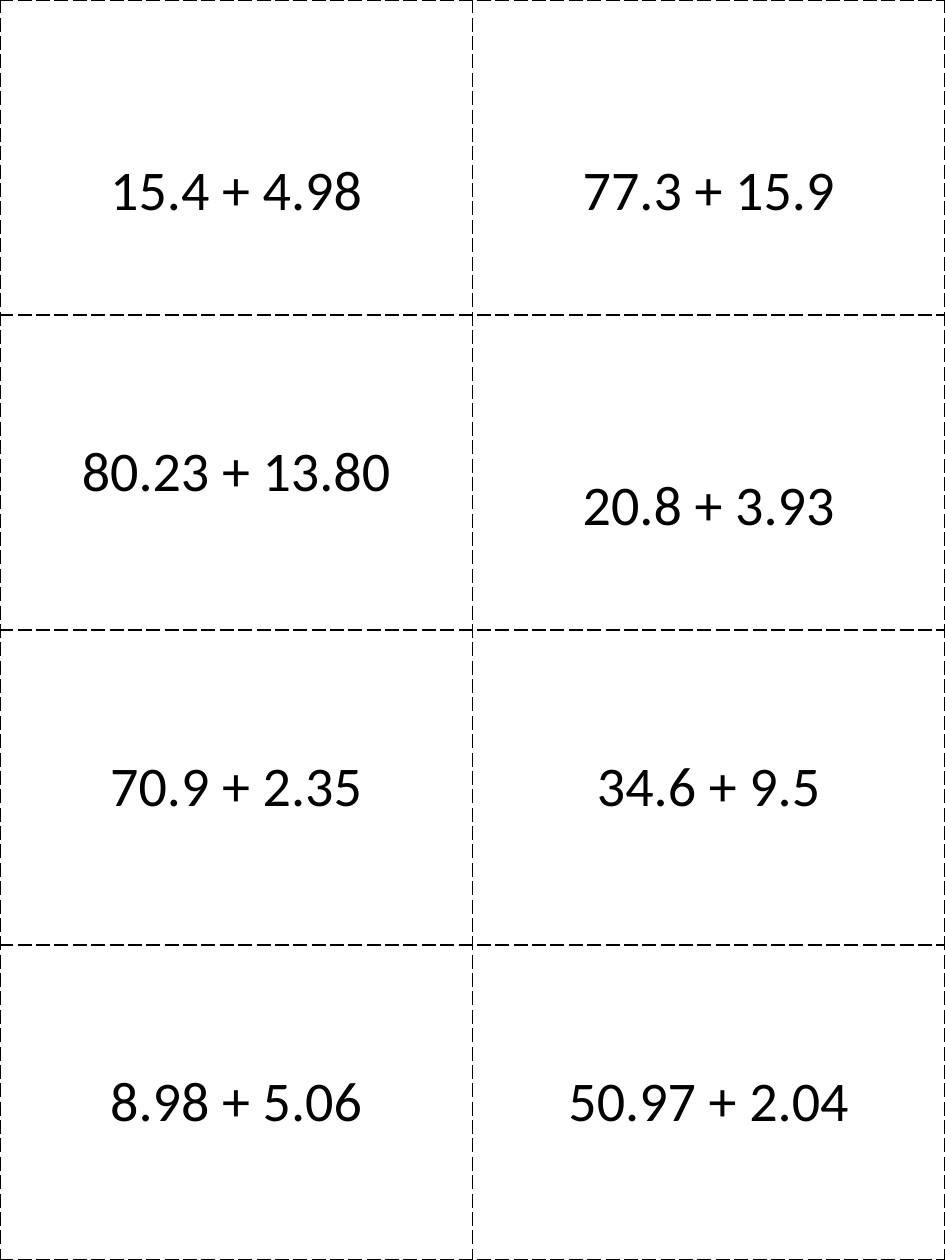
from lxml.etree import SubElement
from pptx import Presentation
from pptx.dml.color import RGBColor
from pptx.enum.text import MSO_ANCHOR, PP_ALIGN
from pptx.oxml.ns import qn
from pptx.util import Inches, Pt

BLACK = RGBColor(0, 0, 0)
LINE_DROP = Pt(39)  # one line of 32 pt text

# Each card: sum, and whether it sits half a line below the middle
CARDS = [
    [("15.4 + 4.98", True), ("77.3 + 15.9", True)],
    [("80.23 + 13.80", False), ("20.8 + 3.93", True)],
    [("70.9 + 2.35", False), ("34.6 + 9.5", False)],
    [("8.98 + 5.06", False), ("50.97 + 2.04", False)],
]


def add_dashed_borders(cell):
    tcPr = cell._tc.get_or_add_tcPr()
    for side in ("a:lnL", "a:lnR", "a:lnT", "a:lnB"):
        ln = SubElement(tcPr, qn(side), w=str(Pt(1)))
        fill = SubElement(ln, qn("a:solidFill"))
        SubElement(fill, qn("a:srgbClr"), val=str(BLACK))
        SubElement(ln, qn("a:prstDash"), val="lgDash")


prs = Presentation()
prs.slide_width, prs.slide_height = Inches(7.5), Inches(10)
s = prs.slides.add_slide(prs.slide_layouts[6])

table = s.shapes.add_table(
    len(CARDS), len(CARDS[0]), 0, 0, prs.slide_width, prs.slide_height
).table
table.first_row = table.horz_banding = False

for row, cards in enumerate(CARDS):
    for col, (text, lowered) in enumerate(cards):
        cell = table.cell(row, col)
        add_dashed_borders(cell)
        cell.fill.background()
        cell.vertical_anchor = MSO_ANCHOR.MIDDLE
        cell.margin_left = cell.margin_right = Inches(0.1)
        cell.margin_bottom = Inches(0.05)
        cell.margin_top = Inches(0.05) + (LINE_DROP if lowered else 0)
        p = cell.text_frame.paragraphs[0]
        p.alignment = PP_ALIGN.CENTER
        r = p.add_run()
        r.text = text
        r.font.name = "Calibri"
        r.font.size = Pt(32)
        r.font.color.rgb = BLACK

prs.save("out.pptx")
